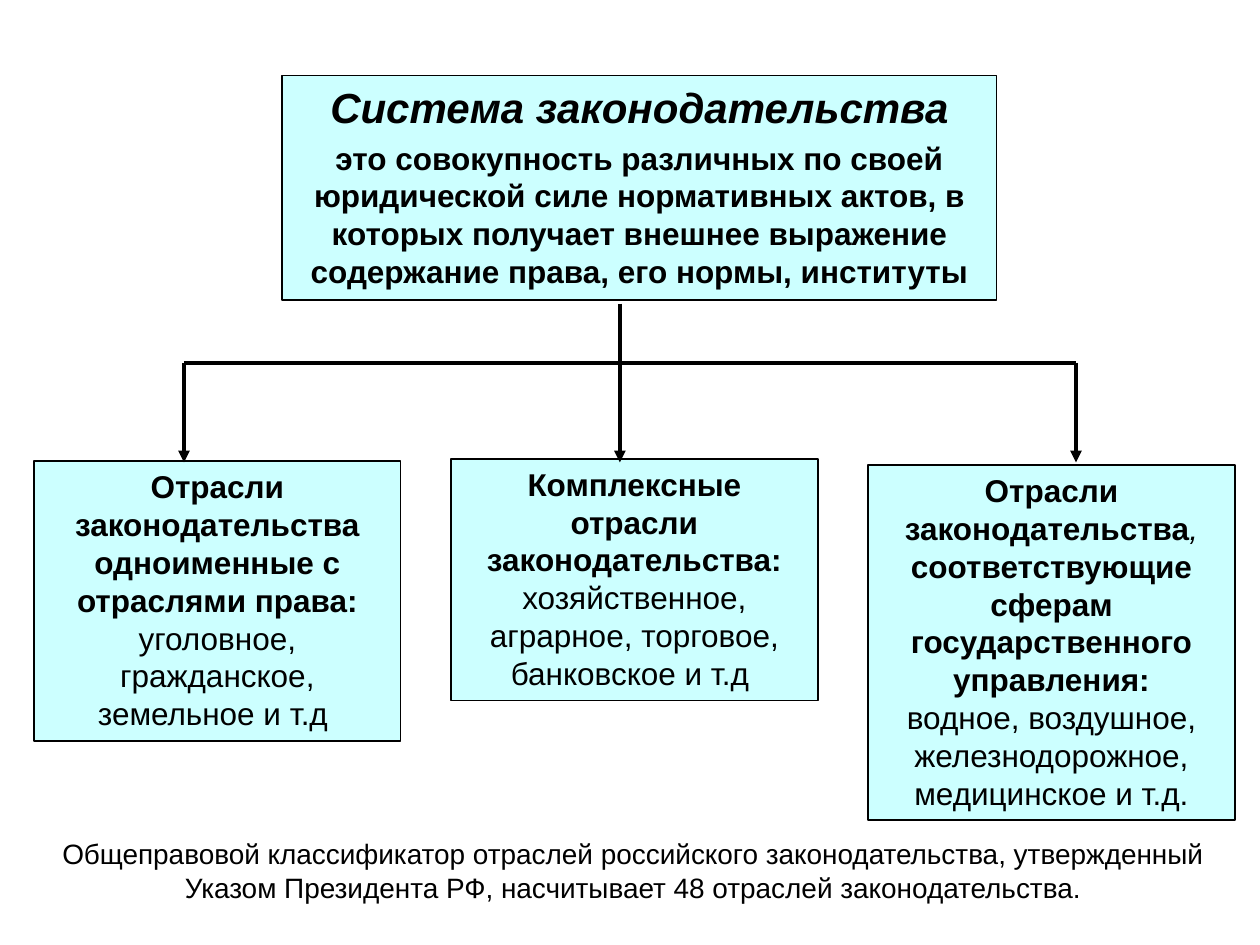
from lxml import etree
from pptx import Presentation
from pptx.dml.color import RGBColor
from pptx.enum.shapes import MSO_CONNECTOR, MSO_SHAPE
from pptx.enum.text import MSO_ANCHOR, PP_ALIGN
from pptx.oxml.ns import qn
from pptx.util import Inches, Pt

RECTANGLE = MSO_SHAPE.RECTANGLE
STRAIGHT = MSO_CONNECTOR.STRAIGHT
CENTER = PP_ALIGN.CENTER
TOP = MSO_ANCHOR.TOP

FONT = "Arial"
BLACK = "000000"
PALE_CYAN = "CCFFFF"
BREAK = "\n"

TITLE = "Система законодательства"
DEFINITION = (
    "это совокупность различных по своей юридической силе нормативных актов, "
    "в которых получает внешнее выражение содержание права, его нормы, институты"
)
# Each branch: left, top, height, then runs of (text, bold, italic)
BRANCHES = [
    (0.27, 3.66, 2.22, [
        ("Отрасли законодательства одноименные с отраслями права: ", True, False),
        ("уголовное, гражданское, земельное и т.д ", False, False),
    ]),
    (3.58, 3.64, 1.92, [
        ("Комплексные отрасли законодательства: ", True, False),
        ("хозяйственное, аграрное, торговое, банковское и т.д ", False, False),
    ]),
    (6.89, 3.69, 2.82, [
        ("Отрасли законодательства", True, False),
        (", ", False, True),
        ("соответствующие сферам государственного управления:", True, False),
        (BREAK, False, False),
        ("водное, воздушное, железнодорожное, медицинское и т.д.", False, False),
    ]),
]
BRANCH_WIDTH = 2.91
FOOTNOTE = (
    "Общеправовой классификатор отраслей российского законодательства, "
    "утвержденный Указом Президента РФ, насчитывает 48 отраслей законодательства."
)


def color(value):
    return RGBColor.from_string(value)


def style_paragraph(paragraph, size):
    paragraph.alignment = CENTER
    paragraph.font.name = FONT
    paragraph.font.size = Pt(size)
    paragraph.font.color.rgb = color(BLACK)


def add_box(slide, left, top, width, height):
    shape = slide.shapes.add_shape(
        RECTANGLE, Inches(left), Inches(top), Inches(width), Inches(height))
    shape.shadow.inherit = False
    shape.fill.solid()
    shape.fill.fore_color.rgb = color(PALE_CYAN)
    shape.line.color.rgb = color(BLACK)
    shape.line.width = Pt(1)
    shape.text_frame.word_wrap = True
    shape.text_frame.vertical_anchor = TOP
    return shape.text_frame


def add_definition(slide, left, top, width, height):
    frame = add_box(slide, left, top, width, height)
    heading = frame.paragraphs[0]
    heading.text = TITLE
    style_paragraph(heading, 24)
    heading.font.bold = heading.font.italic = True

    body = frame.add_paragraph()
    body.text = DEFINITION
    style_paragraph(body, 18)
    body.font.bold = True
    body.space_before = Pt(3.6)


def add_branch(slide, left, top, width, height, runs):
    paragraph = add_box(slide, left, top, width, height).paragraphs[0]
    style_paragraph(paragraph, 18)
    for text, bold, italic in runs:
        if text == BREAK:
            paragraph.add_line_break()
            continue
        run = paragraph.add_run()
        run.text = text
        run.font.bold = bold
        run.font.italic = italic


def add_footnote(slide, left, top, width, height):
    text_box = slide.shapes.add_textbox(
        Inches(left), Inches(top), Inches(width), Inches(height))
    text_box.text_frame.word_wrap = True
    paragraph = text_box.text_frame.paragraphs[0]
    paragraph.text = FOOTNOTE
    style_paragraph(paragraph, 16)


def add_line(slide, start, end, arrow=False):
    connector = slide.shapes.add_connector(
        STRAIGHT, *(Inches(value) for value in (*start, *end)))
    connector.line.color.rgb = color(BLACK)
    connector.line.width = Pt(2.25)
    if arrow:
        line = connector.line._get_or_add_ln()
        etree.SubElement(line, qn("a:tailEnd"), type="triangle")
    etree.SubElement(connector._element.spPr, qn("a:effectLst"))


def add_tree_lines(slide, left, top, width, height):
    right, bottom = left + width, top + height
    stem, bar = 4.92, 2.88
    add_line(slide, (left, bar), (right, bar))
    for x, start in ((stem, top), (left, bar), (right, bar)):
        add_line(slide, (x, start), (x, bottom), arrow=True)


def main():
    presentation = Presentation()
    presentation.slide_width = Inches(10)
    presentation.slide_height = Inches(7.5)
    slide = presentation.slides.add_slide(presentation.slide_layouts[6])

    # Definition on top, three branches below, footnote at the bottom
    add_definition(slide, 2.24, 0.6, 5.67, 1.78)
    for left, top, height, runs in BRANCHES:
        add_branch(slide, left, top, BRANCH_WIDTH, height, runs)
    add_footnote(slide, 0.24, 6.59, 9.57, 0.64)

    # Lines from the definition to the branches
    add_tree_lines(slide, 1.46, 2.41, 7.08, 1.26)

    presentation.save("out.pptx")


if __name__ == "__main__":
    main()
